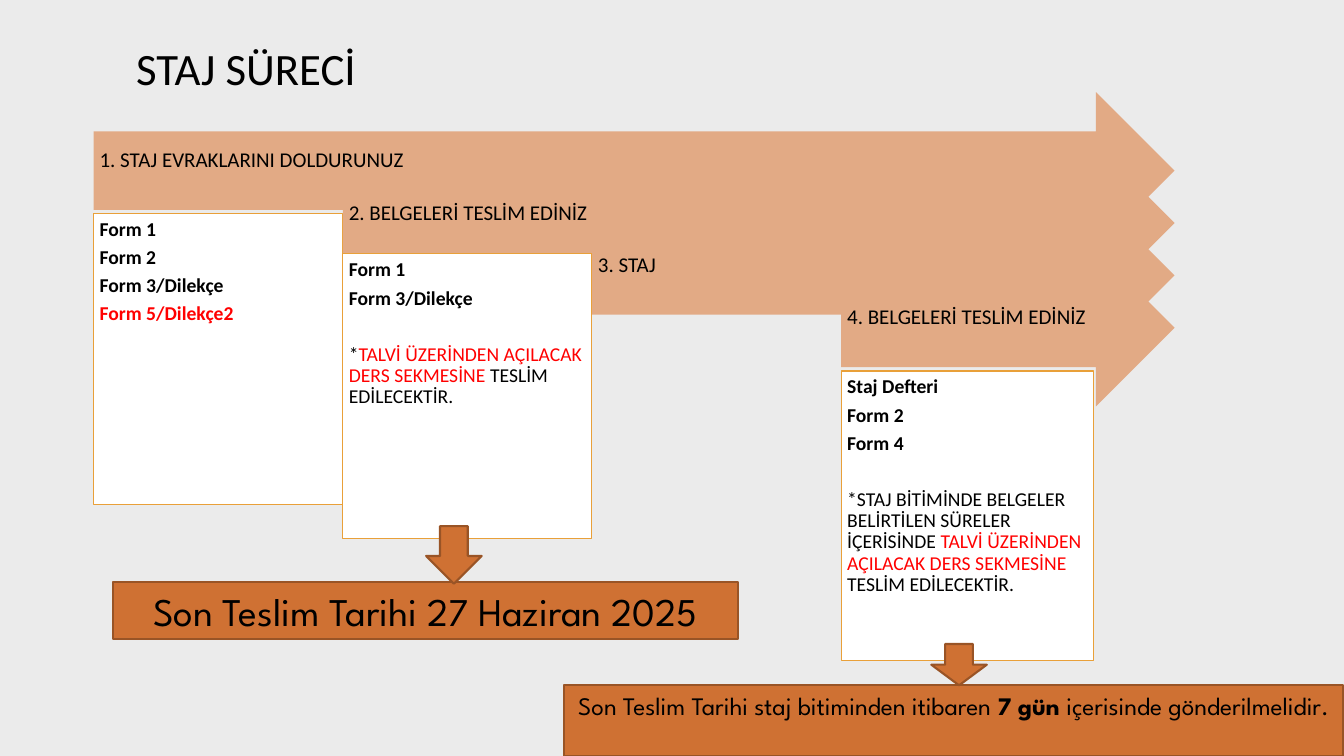
from pptx import Presentation
from pptx.dml.color import RGBColor
from pptx.enum.shapes import MSO_SHAPE as Shape
from pptx.enum.text import MSO_ANCHOR as Anchor, PP_ALIGN as Align
from pptx.util import Cm, Pt

BACKGROUND = RGBColor(0xEB, 0xEB, 0xEB)
BLACK = RGBColor(0x00, 0x00, 0x00)
RED = RGBColor(0xFF, 0x00, 0x00)
WHITE = RGBColor(0xFF, 0xFF, 0xFF)
PEACH = RGBColor(0xE2, 0xAA, 0x85)
GOLD = RGBColor(0xE9, 0xA0, 0x39)
ORANGE = RGBColor(0xCF, 0x71, 0x33)
BROWN = RGBColor(0x99, 0x54, 0x26)

BODY_FONT = "Calibri"
BANNER_FONT = "League Spartan"

STAGE_LEFT, STAGE_TOP = 2.36, 2.32
STAGE_STEP_X, STAGE_STEP_Y = 6.28, 1.32
STAGE_RIGHT, STAGE_HEIGHT = 29.6, 3.96

TARGET = "TALVİ ÜZERİNDEN AÇILACAK DERS SEKMESİNE "
STAGES = [
    "1. STAJ EVRAKLARINI DOLDURUNUZ",
    "2. BELGELERİ TESLİM EDİNİZ",
    "3. STAJ",
    "4. BELGELERİ TESLİM EDİNİZ",
]
CARDS = {
    0: (5.38, 6.27, 7.34,
        [("Form 1", BLACK), ("Form 2", BLACK), ("Form 3/Dilekçe", BLACK),
         ("Form 5/Dilekçe2", RED)],
        []),
    1: (6.4, 6.27, 7.16,
        [("Form 1", BLACK), ("Form 3/Dilekçe", BLACK)],
        [("*", BLACK), (TARGET, RED), ("TESLİM EDİLECEKTİR.", BLACK)]),
    3: (9.35, 6.35, 7.29,
        [("Staj Defteri", BLACK), ("Form 2", BLACK), ("Form 4", BLACK)],
        [("*STAJ BİTİMİNDE BELGELER BELİRTİLEN SÜRELER İÇERİSİNDE ", BLACK),
         (TARGET, RED), ("TESLİM EDİLECEKTİR.", BLACK)]),
}


def add_block(slide, kind, box, fill, line=None, width=0.75):
    block = slide.shapes.add_shape(kind, *map(Cm, box))
    block.shadow.inherit = False
    block.fill.solid()
    block.fill.fore_color.rgb = fill
    if line is None:
        block.line.fill.background()
    else:
        block.line.color.rgb = line
        block.line.width = Pt(width)
    return block


def set_frame(frame, anchor, margins=(0.25, 0.13, 0.25, 0.13)):
    frame.word_wrap = True
    frame.vertical_anchor = anchor
    (frame.margin_left, frame.margin_top,
     frame.margin_right, frame.margin_bottom) = map(Cm, margins)


def add_run(paragraph, text, size, color=BLACK, bold=False, font=BODY_FONT):
    run = paragraph.add_run()
    run.text = text
    run.font.name = font
    run.font.size = Pt(size)
    run.font.bold = bold
    run.font.color.rgb = color


def set_spacing(paragraph, after):
    paragraph.alignment = Align.LEFT
    paragraph.line_spacing = 0.9
    paragraph.space_after = Pt(after)


def add_title(slide, text):
    title = slide.shapes.add_textbox(Cm(3.18), Cm(0.71), Cm(27.5), Cm(1.98))
    set_frame(title.text_frame, Anchor.MIDDLE)
    add_run(title.text_frame.paragraphs[0], text, 32)


def add_stage(slide, left, top, label):
    box = (left, top, STAGE_RIGHT - left, STAGE_HEIGHT)
    stage = add_block(slide, Shape.RIGHT_ARROW, box, PEACH)
    set_frame(stage.text_frame, Anchor.MIDDLE, (0.15, 0.15, 0.71, 0.64))
    paragraph = stage.text_frame.paragraphs[0]
    set_spacing(paragraph, 5)
    add_run(paragraph, label, 15)


def add_card(slide, box, forms, note):
    card = add_block(slide, Shape.RECTANGLE, box, WHITE, GOLD)
    frame = card.text_frame
    set_frame(frame, Anchor.TOP, (0.15, 0.15, 0.15, 0.15))
    for index, (form, color) in enumerate(forms):
        paragraph = frame.add_paragraph() if index else frame.paragraphs[0]
        set_spacing(paragraph, 5)
        add_run(paragraph, form, 14, color, bold=True)
    if note:
        paragraph = frame.add_paragraph()
        set_spacing(paragraph, 5)
        paragraph.space_before = Pt(20)
        for text, color in note:
            add_run(paragraph, text, 14, color)


def add_deadline(slide, box, arrow_box, size, parts):
    banner = add_block(slide, Shape.RECTANGLE, box, ORANGE, BROWN, 1.5)
    set_frame(banner.text_frame, Anchor.TOP)
    paragraph = banner.text_frame.paragraphs[0]
    paragraph.alignment = Align.CENTER
    for text, bold in parts:
        add_run(paragraph, text, size, bold=bold, font=BANNER_FONT)
    add_block(slide, Shape.DOWN_ARROW, arrow_box, ORANGE, BROWN, 1.5)


def main():
    deck = Presentation()
    deck.slide_width, deck.slide_height = Cm(33.87), Cm(19.05)
    slide = deck.slides.add_slide(deck.slide_layouts[6])
    slide.background.fill.solid()
    slide.background.fill.fore_color.rgb = BACKGROUND

    add_title(slide, "STAJ SÜRECİ")
    for index, label in enumerate(STAGES):
        left = STAGE_LEFT + index * STAGE_STEP_X
        add_stage(slide, left, STAGE_TOP + index * STAGE_STEP_Y, label)
        if index in CARDS:
            top, width, height, forms, note = CARDS[index]
            add_card(slide, (left, top, width, height), forms, note)

    add_deadline(slide, (2.84, 14.66, 15.75, 1.45), (10.74, 13.26, 1.4, 1.45),
                 28, [("Son Teslim Tarihi 27 Haziran 2025", False)])
    add_deadline(slide, (14.22, 17.27, 19.63, 1.78), (23.47, 16.23, 1.4, 1.04),
                 18, [("Son Teslim Tarihi staj bitiminden itibaren ", False),
                      ("7 gün ", True),
                      ("içerisinde gönderilmelidir.", False)])
    deck.save("out.pptx")


if __name__ == "__main__":
    main()
